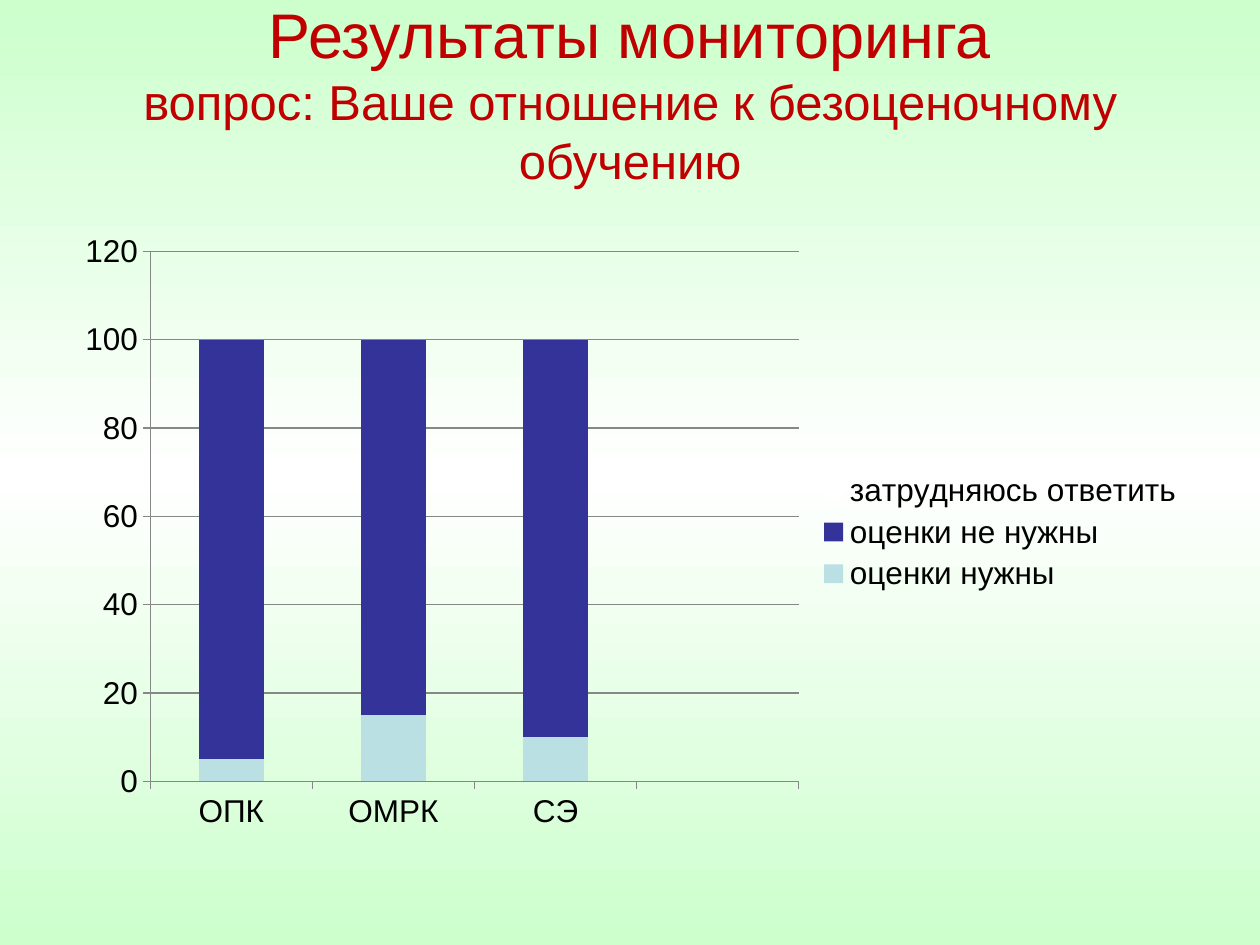
from copy import deepcopy

from pptx import Presentation
from pptx.chart.data import CategoryChartData
from pptx.dml.color import RGBColor
from pptx.enum.chart import XL_CHART_TYPE as ChartType
from pptx.enum.chart import XL_LEGEND_POSITION as LegendPosition
from pptx.enum.chart import XL_TICK_MARK as TickMark
from pptx.enum.text import MSO_ANCHOR as Anchor
from pptx.enum.text import MSO_AUTO_SIZE as AutoSize
from pptx.enum.text import PP_ALIGN as Align
from pptx.oxml import parse_xml
from pptx.oxml.ns import nsdecls
from pptx.util import Inches, Pt

COLORS = {
    "edge": "CCFFCC",
    "middle": "FFFFFF",
    "title": "C00000",
    "text": "000000",
    "grid": "878787",
    "needed": "BBE0E3",
    "not_needed": "333399",
    "undecided": "FFFFFF",
}
FONT = "Arial"
WIDTH, HEIGHT = Inches(10), Inches(7.5)
TITLE_BOX = (0.05, 0.04, 0.9, 0.116)
CHART_BOX = (0.047, 0.233, 0.903, 0.66)
PLOT_SHARES = {"x": 0.08, "y": 0.05, "w": 0.57, "h": 0.85}
TITLE_LINES = [
    ("Результаты мониторинга", 36),
    ("вопрос: Ваше отношение к безоценочному обучению", 28),
]
CATEGORIES = ["ОПК", "ОМРК", "СЭ", ""]
SERIES = [
    ("оценки нужны", [5, 15, 10, None], "needed"),
    ("оценки не нужны", [95, 85, 90, None], "not_needed"),
    ("затрудняюсь ответить", [None] * 4, "undecided"),
]


def color(name):
    return RGBColor.from_string(COLORS[name])


def apply_format(target, values):
    for name, value in values.items():
        setattr(target, name, value)


def to_lengths(box):
    return [int(share * side) for share, side in zip(box, (WIDTH, HEIGHT) * 2)]


def format_font(font, size, color_name):
    apply_format(font, {"name": FONT, "size": Pt(size), "bold": False})
    font.color.rgb = color(color_name)


def fill_background(slide):
    fill = slide.background.fill
    fill.gradient()
    fill.gradient_angle = 270
    stops = fill.gradient_stops
    for stop, position in zip(stops, (0, 1)):
        stop.color.rgb = color("edge")
        stop.position = position
    first = fill._fill._gradFill.gsLst[0]
    first.addnext(deepcopy(first))
    middle = fill.gradient_stops[1]
    middle.color.rgb = color("middle")
    middle.position = 0.5


def place_title(slide, box):
    title = slide.shapes.title
    apply_format(title, dict(zip(("left", "top", "width", "height"), to_lengths(box))))
    frame = title.text_frame
    apply_format(frame, {
        "word_wrap": True,
        "auto_size": AutoSize.NONE,
        "vertical_anchor": Anchor.MIDDLE,
    })
    paragraph = frame.paragraphs[0]
    apply_format(paragraph, {"alignment": Align.CENTER, "line_spacing": 1.0})
    for index, (text, size) in enumerate(TITLE_LINES):
        if index:
            paragraph.add_line_break()
        run = paragraph.add_run()
        run.text = text
        format_font(run.font, size, "title")


def set_plot_layout(chart):
    plot_area = chart._chartSpace.chart.plotArea
    for layout in plot_area.findall("{*}layout"):
        plot_area.remove(layout)
    modes = "".join(f'<c:{side}Mode val="edge"/>' for side in "xy")
    shares = "".join(f'<c:{key} val="{share}"/>' for key, share in PLOT_SHARES.items())
    plot_area.insert(0, parse_xml(
        f'<c:layout {nsdecls("c")}><c:manualLayout><c:layoutTarget val="inner"/>'
        f"{modes}{shares}</c:manualLayout></c:layout>"
    ))


def place_chart(slide, box):
    data = CategoryChartData()
    data.categories = CATEGORIES
    for name, values, _ in SERIES:
        data.add_series(name, values)
    chart = slide.shapes.add_chart(
        ChartType.COLUMN_STACKED, *to_lengths(box), data
    ).chart
    apply_format(chart, {"has_title": False, "has_legend": True})
    format_font(chart.font, 18, "text")
    apply_format(chart.legend, {
        "position": LegendPosition.RIGHT,
        "include_in_layout": False,
    })
    plot = chart.plots[0]
    apply_format(plot, {"gap_width": 150, "overlap": 100, "vary_by_categories": False})
    for series, (_, _, color_name) in zip(plot.series, SERIES):
        series.format.fill.solid()
        series.format.fill.fore_color.rgb = color(color_name)
    value_axis = chart.value_axis
    apply_format(value_axis, {
        "minimum_scale": 0,
        "maximum_scale": 120,
        "major_unit": 20,
        "has_major_gridlines": True,
    })
    for axis in (chart.category_axis, value_axis):
        apply_format(axis, {
            "major_tick_mark": TickMark.OUTSIDE,
            "minor_tick_mark": TickMark.NONE,
        })
    for part in (chart.category_axis, value_axis, value_axis.major_gridlines):
        part.format.line.color.rgb = color("grid")
        part.format.line.width = Pt(0.75)
    set_plot_layout(chart)


def main():
    presentation = Presentation()
    apply_format(presentation, {"slide_width": WIDTH, "slide_height": HEIGHT})
    slide = presentation.slides.add_slide(presentation.slide_layouts[5])
    fill_background(slide)
    place_title(slide, TITLE_BOX)
    place_chart(slide, CHART_BOX)
    presentation.save("out.pptx")


if __name__ == "__main__":
    main()
